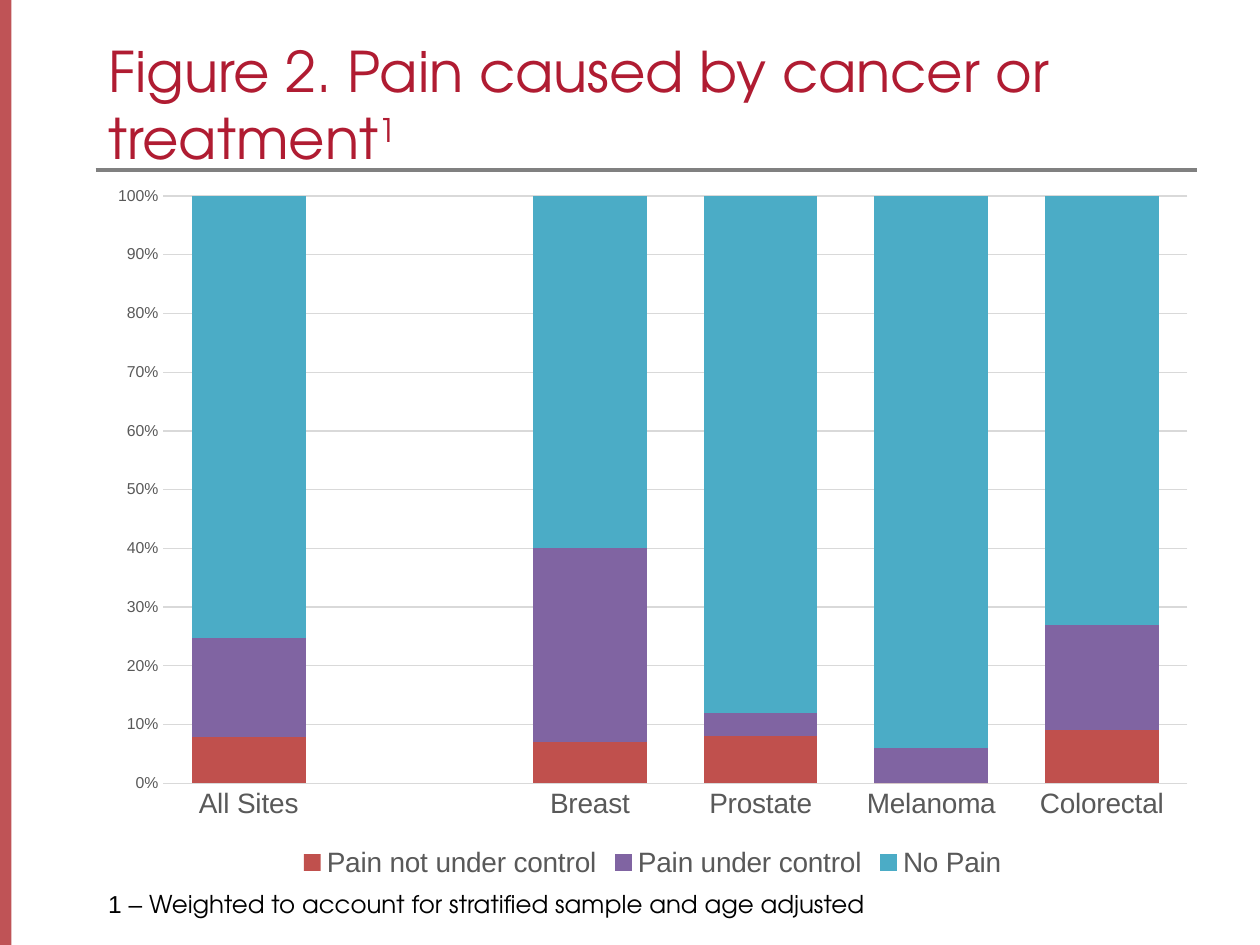
from dataclasses import dataclass
from typing import NamedTuple

from lxml.etree import SubElement
from pptx import Presentation
from pptx.chart.chart import Chart
from pptx.chart.data import CategoryChartData
from pptx.dml.color import RGBColor as RGB
from pptx.enum.chart import XL_CHART_TYPE as ChartType
from pptx.enum.chart import XL_LEGEND_POSITION as LegendPosition
from pptx.enum.chart import XL_TICK_MARK as TickMark
from pptx.enum.shapes import MSO_CONNECTOR as Connector
from pptx.enum.shapes import MSO_SHAPE as Shape
from pptx.enum.text import MSO_ANCHOR as Anchor
from pptx.enum.text import PP_ALIGN as Align
from pptx.oxml.ns import qn
from pptx.slide import Slide
from pptx.text.text import Font
from pptx.util import Inches, Pt


@dataclass(frozen=True)
class Theme:
    heading_font: str = "TeX Gyre Adventor"
    body_font: str = "Arial"
    title_size: int = 32
    label_size: int = 16
    note_size: int = 14
    chart_size: int = 10
    scale_size: int = 9
    title: str = "B01C32"
    side_bar: str = "AF282C"
    rule: str = "808080"
    text: str = "000000"
    label: str = "595959"
    grid: str = "D9D9D9"


class PainLevel(NamedTuple):
    name: str
    shares: tuple[int | None, ...]
    color: str


THEME = Theme()
LEFT = Inches(0.76)
SITES = ("All Sites", "", "Breast", "Prostate", "Melanoma", "Colorectal")
PAIN_LEVELS = (
    PainLevel("Pain not under control", (8, None, 7, 8, 0, 9), "C0504D"),
    PainLevel("Pain under control", (17, None, 33, 4, 6, 18), "8064A2"),
    PainLevel("No Pain", (76, None, 60, 88, 94, 73), "4BACC6"),
)


def set_font(font: Font, name: str, size: int, color: str) -> None:
    font.name = name
    font.size = Pt(size)
    font.bold = False
    font.color.rgb = RGB.from_string(color)


def add_side_bar(slide: Slide, height: int) -> None:
    bar = slide.shapes.add_shape(Shape.RECTANGLE, 0, 0, Inches(0.09), height)
    bar.shadow.inherit = False
    bar.line.fill.background()
    bar.fill.solid()
    bar.fill.fore_color.rgb = RGB.from_string(THEME.side_bar)
    color = bar.fill._xPr.find(qn("a:solidFill"))[0]
    SubElement(color, qn("a:alpha"), val="80000")


def add_title_rule(slide: Slide) -> None:
    y = Inches(1.35)
    rule = slide.shapes.add_connector(Connector.STRAIGHT, LEFT, y, Inches(9.5), y)
    rule.line.color.rgb = RGB.from_string(THEME.rule)
    rule.line.width = Pt(2.5)
    SubElement(rule._element.spPr, qn("a:effectLst"))


def fill_title(slide: Slide) -> None:
    title = slide.shapes.title
    title.left, title.top = LEFT, Inches(0.19)
    title.width, title.height = Inches(8.74), Inches(1.18)
    frame = title.text_frame
    frame.margin_left = frame.margin_right = Inches(0.1)
    frame.margin_top = frame.margin_bottom = Inches(0.1)
    frame.vertical_anchor = Anchor.TOP
    heading = frame.paragraphs[0]
    heading.alignment = Align.LEFT
    set_font(heading.font, THEME.heading_font, THEME.title_size, THEME.title)
    heading.add_run().text = "Figure 2. Pain caused by cancer or treatment"
    note_mark = heading.add_run()
    note_mark.text = "1"
    note_mark.font._element.set("baseline", "30000")


def add_footnote(slide: Slide) -> None:
    box = slide.shapes.add_textbox(LEFT, Inches(7.01), Inches(7.24), Inches(0.34))
    box.text_frame.word_wrap = True
    note = box.text_frame.paragraphs[0]
    for words, font_name in (
        ("1 – ", THEME.body_font),
        ("Weighted to account for stratified sample and age adjusted", THEME.heading_font),
    ):
        run = note.add_run()
        run.text = words
        set_font(run.font, font_name, THEME.note_size, THEME.text)


def style_axes(chart: Chart) -> None:
    grid_color = RGB.from_string(THEME.grid)
    sites, scale = chart.category_axis, chart.value_axis
    for axis, size in ((sites, THEME.label_size), (scale, THEME.scale_size)):
        axis.major_tick_mark = axis.minor_tick_mark = TickMark.NONE
        set_font(axis.tick_labels.font, THEME.body_font, size, THEME.label)
    scale.format.line.fill.background()
    scale.minimum_scale, scale.maximum_scale, scale.major_unit = 0, 1, 0.1
    scale.tick_labels.number_format = "0%"
    scale.tick_labels.number_format_is_linked = False
    scale.has_major_gridlines = True
    for line in (sites.format.line, scale.major_gridlines.format.line):
        line.color.rgb = grid_color
        line.width = Pt(0.75)


def add_pain_chart(slide: Slide) -> None:
    data = CategoryChartData()
    data.categories = SITES
    for level in PAIN_LEVELS:
        data.add_series(level.name, level.shares)
    chart = slide.shapes.add_chart(
        ChartType.COLUMN_STACKED_100,
        LEFT, Inches(1.37), Inches(8.84), Inches(5.64), data,
    ).chart
    set_font(chart.font, THEME.body_font, THEME.chart_size, THEME.text)
    chart.has_title = False
    chart.has_legend = True
    chart.legend.position = LegendPosition.BOTTOM
    chart.legend.include_in_layout = False
    set_font(chart.legend.font, THEME.body_font, THEME.label_size, THEME.label)
    style_axes(chart)

    plot = chart.plots[0]
    plot.gap_width, plot.overlap = 50, 100
    plot.vary_by_categories = False
    for series, level in zip(plot.series, PAIN_LEVELS):
        series.format.fill.solid()
        series.format.fill.fore_color.rgb = RGB.from_string(level.color)


def main() -> None:
    deck = Presentation()
    deck.slide_width, deck.slide_height = Inches(10), Inches(7.5)
    slide = deck.slides.add_slide(deck.slide_layouts[5])
    add_side_bar(slide, deck.slide_height)
    add_title_rule(slide)
    fill_title(slide)
    add_footnote(slide)
    add_pain_chart(slide)
    deck.save("out.pptx")


if __name__ == "__main__":
    main()
